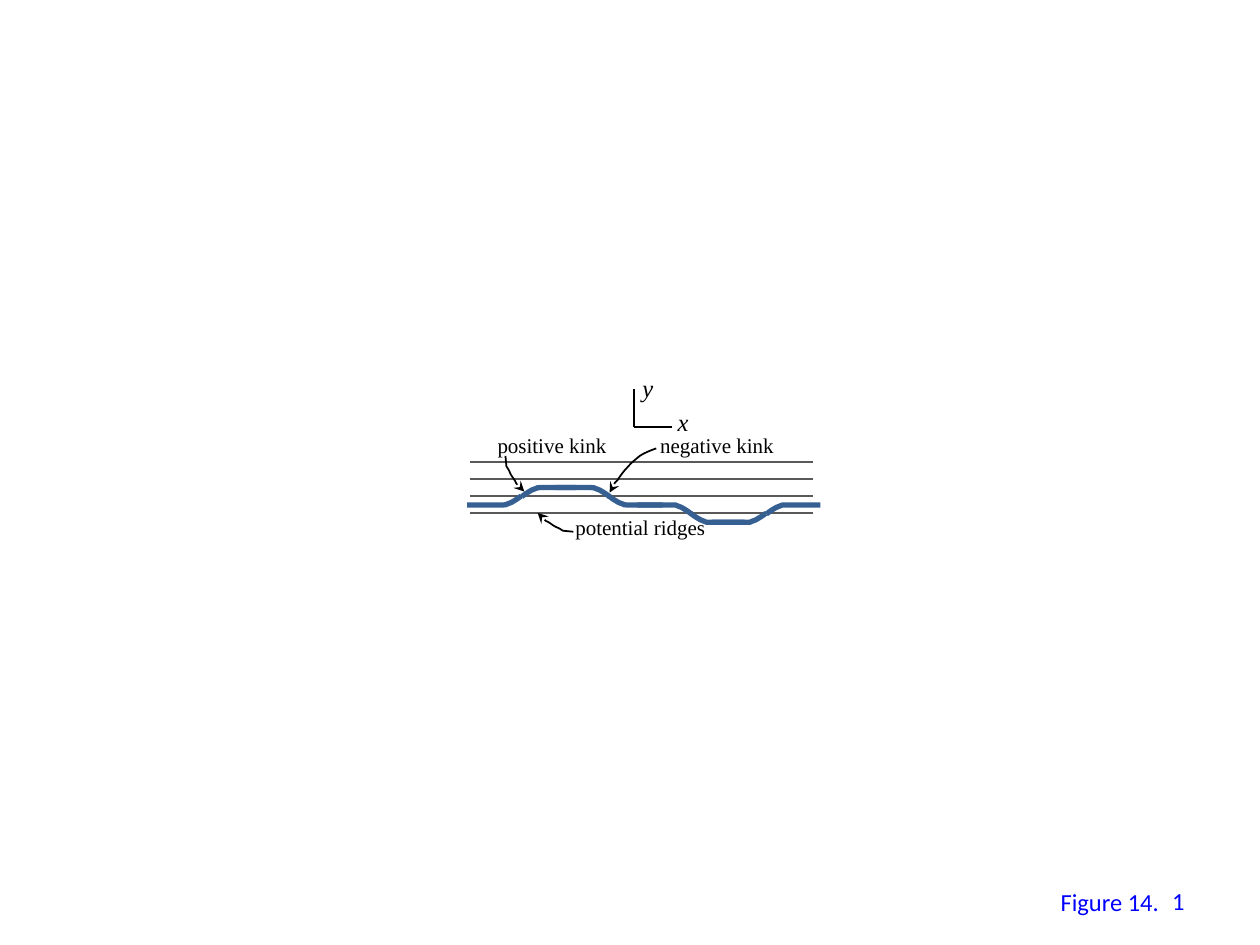
from lxml.etree import SubElement
from pptx import Presentation
from pptx.dml.color import RGBColor
from pptx.enum.shapes import MSO_CONNECTOR
from pptx.enum.text import MSO_ANCHOR, PP_ALIGN
from pptx.oxml.ns import qn
from pptx.util import Cm, Pt

BLACK, GREY, STEEL, BLUE = "000000", "595959", "376092", "0000FF"


def color(hex_code):
    return RGBColor.from_string(hex_code)


def write(frame, text, size=12, font="Times New Roman", ink=BLACK,
          italic=False, align=PP_ALIGN.LEFT):
    paragraph = frame.paragraphs[0]
    paragraph.alignment = align
    run = paragraph.add_run()
    run.text = text
    run.font.size = Pt(size)
    run.font.name = font
    run.font.italic = italic
    run.font.color.rgb = color(ink)


class Figure:
    """Holds the slide and the style of its elements."""

    def __init__(self, slide):
        self.slide = slide
        self.shapes = slide.shapes

    def label(self, text, left, top, width, height, wrap=False,
              anchor=MSO_ANCHOR.TOP, **style):
        box = self.shapes.add_textbox(Cm(left), Cm(top), Cm(width), Cm(height))
        box.text_frame.word_wrap = wrap
        box.text_frame.vertical_anchor = anchor
        write(box.text_frame, text, **style)

    def line(self, start, end, ink, weight):
        rule = self.shapes.add_connector(
            MSO_CONNECTOR.STRAIGHT, *map(Cm, start), *map(Cm, end))
        rule.line.color.rgb = color(ink)
        rule.line.width = Pt(weight)
        SubElement(rule._element.spPr, qn("a:effectLst"))

    def curve(self, points, ink, weight, straight=0, arrow=None):
        """Draw `straight` segments, then cubic curves of three points each."""
        start, *rest = [(Cm(x), Cm(y)) for x, y in points]
        builder = self.shapes.build_freeform(*start)
        builder.add_line_segments(rest, close=False)
        shape = builder.convert_to_shape()
        shape.shadow.inherit = False
        shape.fill.background()
        shape.line.color.rgb = color(ink)
        shape.line.width = Pt(weight)
        properties = shape._element.spPr
        outline = properties.find(".//" + qn("a:path"))
        segments = outline.findall(qn("a:lnTo"))[straight:]
        for i in range(0, len(segments), 3):
            bezier = SubElement(outline, qn("a:cubicBezTo"))
            for segment in segments[i:i + 3]:
                bezier.append(segment[0])
                outline.remove(segment)
        if arrow:
            SubElement(properties.find(qn("a:ln")), qn("a:" + arrow), type="stealth")
        return shape


# Half of a kink: a flat run, then a bend to the middle of the step
HALF_KINK = [(0, 0), (0.46, 0), (0.71, 0),
             (0.76, 0), (0.79, 0), (0.81, 0.02),
             (0.84, 0.02), (0.86, 0.03), (0.89, 0.05),
             (0.94, 0.08), (0.99, 0.11), (1.02, 0.13),
             (1.04, 0.15), (1.09, 0.18), (1.09, 0.18)]
# Flat end x, level from the top, direction along x, direction along y
HALF_KINKS = [(15.01, 2, -1, -1), (9.42, 1, 1, -1), (11.61, 0, -1, 1),
              (11.2, 0, 1, 1), (13.36, 1, -1, -1), (12.85, 1, 1, 1),
              (14.35, 2, 1, -1), (16.54, 1, -1, 1)]
# Short pointer, as offsets from its label
HOOK = [(0, 0), (0, 0.08), (0.02, 0.13), (0.02, 0.21),
        (0.05, 0.26), (0.07, 0.28), (0.1, 0.36),
        (0.12, 0.41), (0.2, 0.49), (0.22, 0.56),
        (0.28, 0.62), (0.38, 0.72), (0.38, 0.72)]
NEGATIVE_POINTER = [(12.29, 9.93), (12.34, 9.86), (12.37, 9.75), (12.45, 9.68),
                    (12.5, 9.6), (12.57, 9.5), (12.65, 9.42),
                    (12.73, 9.32), (12.83, 9.25), (12.9, 9.19),
                    (13, 9.12), (13.23, 9.04), (13.23, 9.04)]


def main():
    deck = Presentation()
    deck.slide_width, deck.slide_height = Cm(25.4), Cm(19.05)
    figure = Figure(deck.slides.add_slide(deck.slide_layouts[6]))

    # Caption and potential ridges
    footer = dict(size=14, font="Calibri", ink=BLUE)
    figure.label("Figure 14.", 21.13, 17.75, 2.51, 0.86, **footer)
    figure.label("potential ridges", 11.35, 10.24, 3.15, 0.76)
    for i in range(4):
        ridge_y = 9.32 + 0.34 * i
        figure.line((9.47, ridge_y), (16.38, ridge_y), GREY, 1)

    # Axes
    origin = (12.78, 8.61)
    for axis_end in [(13.54, 8.61), (12.78, 7.85)]:
        figure.line(axis_end, origin, BLACK, 1.5)
    for axis, left, top in [("x", 13.41, 8.08), ("y", 12.7, 7.39)]:
        figure.label(axis, left, top, 0.86, 0.86, size=14, italic=True)

    # Dislocation line with its kinks
    halves = []
    for x, level, along, down in HALF_KINKS:
        y = 9.83 + 0.35 * level
        points = [(x + along * dx, y + down * dy) for dx, dy in HALF_KINK]
        halves.append(figure.curve(points, STEEL, 3, straight=2))
    figure.shapes.add_group_shape(halves)

    # Pointers and kink labels
    positive_pointer = [(10.19 + dx, 9.19 + dy) for dx, dy in HOOK]
    ridge_pointer = [(11.56 - dy, 10.72 - dx) for dx, dy in HOOK]
    figure.curve(positive_pointer, BLACK, 1, arrow="tailEnd")
    figure.curve(NEGATIVE_POINTER, BLACK, 1, arrow="headEnd")
    figure.curve(ridge_pointer, BLACK, 1, arrow="tailEnd")
    figure.label("negative kink", 13.06, 8.59, 2.82, 0.76)
    figure.label("positive kink", 9.78, 8.59, 2.74, 0.76)

    # Figure number
    figure.label("1", 18.21, 17.65, 5.92, 1.02, wrap=True,
                 anchor=MSO_ANCHOR.MIDDLE, align=PP_ALIGN.RIGHT, **footer)

    deck.save("out.pptx")


if __name__ == "__main__":
    main()
